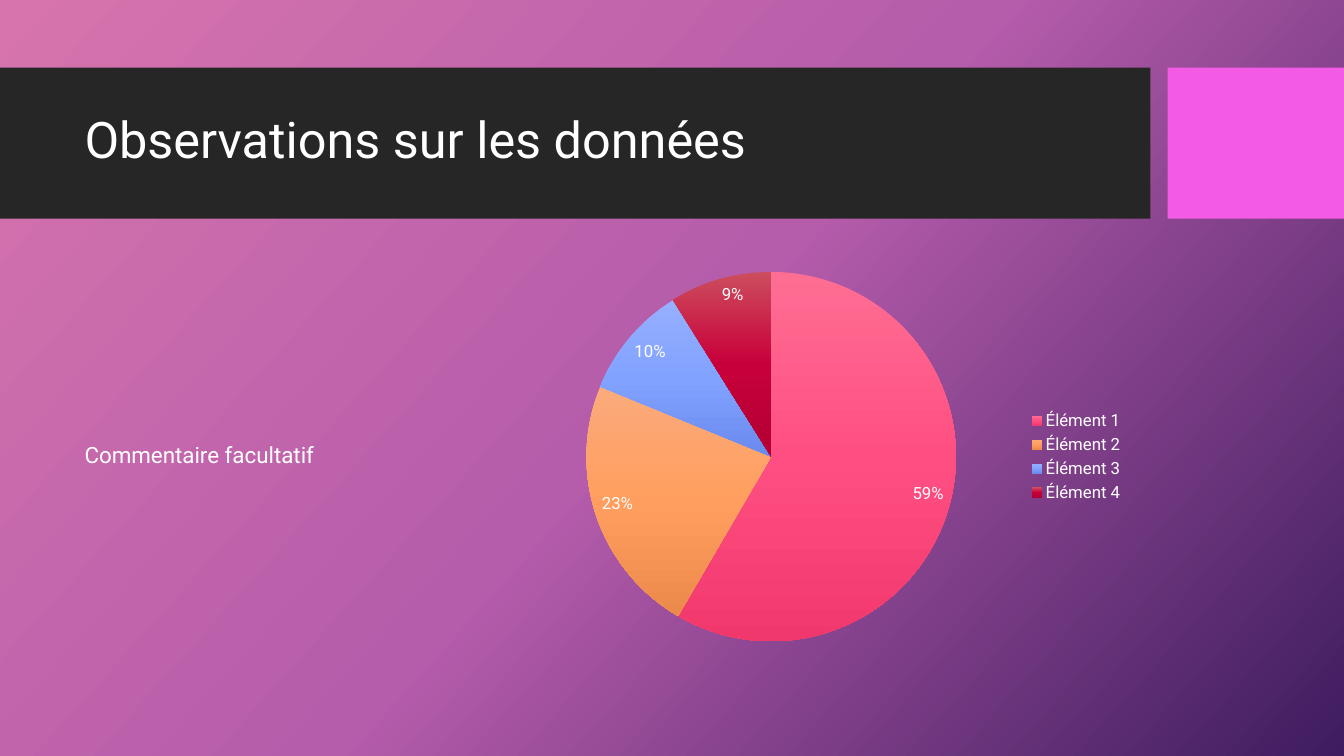
"""Build the data observations slide with its pie chart."""
from copy import deepcopy

from pptx import Presentation
from pptx.chart.data import CategoryChartData
from pptx.dml.color import RGBColor
from pptx.enum.chart import XL_CHART_TYPE, XL_LABEL_POSITION, XL_LEGEND_POSITION
from pptx.enum.shapes import MSO_SHAPE
from pptx.enum.text import MSO_ANCHOR
from pptx.util import Inches, Pt

WHITE = RGBColor(0xFF, 0xFF, 0xFF)
CHARCOAL = RGBColor(0x26, 0x26, 0x26)
PINK = RGBColor(0xF3, 0x5A, 0xE6)
BACKDROP = (RGBColor(0xD7, 0x74, 0xAD), RGBColor(0xB5, 0x5C, 0xAB), RGBColor(0x3E, 0x1C, 0x5F))
ROSE = (RGBColor(0xFE, 0x6E, 0x93), RGBColor(0xFF, 0x4F, 0x82), RGBColor(0xF1, 0x38, 0x6D))
ORANGE = (RGBColor(0xFB, 0xAB, 0x7C), RGBColor(0xFF, 0x9E, 0x5E), RGBColor(0xEB, 0x8A, 0x4B))
BLUE = (RGBColor(0x96, 0xB0, 0xFF), RGBColor(0x82, 0xA2, 0xFF), RGBColor(0x69, 0x8B, 0xEE))
CRIMSON = (RGBColor(0xCC, 0x4D, 0x5D), RGBColor(0xC8, 0x00, 0x3A), RGBColor(0xB2, 0x00, 0x33))
ITEMS = (
    ("Élément 1", 59, ROSE),
    ("Élément 2", 23, ORANGE),
    ("Élément 3", 10, BLUE),
    ("Élément 4", 9, CRIMSON),
)


class SlideBuilder:
    """Hold the text style and the current slide."""

    def __init__(self, slide, font_name, text_color):
        self.slide = slide
        self.font_name = font_name
        self.text_color = text_color

    def style_font(self, font, size):
        font.name = self.font_name
        font.size = Pt(size)
        font.color.rgb = self.text_color

    def gradient(self, fill, colors, angle):
        fill.gradient()
        fill.gradient_angle = 360 - angle
        stop_list = fill.gradient_stops._gsLst
        stop_list.append(deepcopy(stop_list[-1]))
        for index, (stop, color) in enumerate(zip(fill.gradient_stops, colors)):
            stop.position = index / (len(colors) - 1)
            stop.color.rgb = color

    def band(self, left, width, color):
        band = self.slide.shapes.add_shape(
            MSO_SHAPE.RECTANGLE, Inches(left), Inches(0.67), Inches(width), Inches(1.5))
        band.shadow.inherit = False
        band.fill.solid()
        band.fill.fore_color.rgb = color
        band.line.fill.background()

    def text(self, wording, left, top, width, height, size):
        box = self.slide.shapes.add_textbox(
            Inches(left), Inches(top), Inches(width), Inches(height))
        frame = box.text_frame
        frame.word_wrap = True
        frame.vertical_anchor = MSO_ANCHOR.MIDDLE
        paragraph = frame.paragraphs[0]
        paragraph.line_spacing = 0.9
        run = paragraph.add_run()
        run.text = wording
        self.style_font(run.font, size)

    def pie(self, items, left, top, width, height):
        data = CategoryChartData()
        data.categories = [name for name, _, _ in items]
        data.add_series("Series 1", [share for _, share, _ in items])
        chart = self.slide.shapes.add_chart(
            XL_CHART_TYPE.PIE, Inches(left), Inches(top),
            Inches(width), Inches(height), data).chart
        self.style_font(chart.font, 10)
        chart.has_title = False
        chart.has_legend = True
        chart.legend.position = XL_LEGEND_POSITION.RIGHT
        chart.legend.include_in_layout = False
        self.style_font(chart.legend.font, 12)

        plot = chart.plots[0]
        plot.vary_by_categories = True
        for index, (_, _, colors) in enumerate(items):
            wedge = plot.series[0].points[index].format
            self.gradient(wedge.fill, colors, 90)
            wedge.line.fill.background()
        plot.has_data_labels = True
        labels = plot.data_labels
        labels.show_value = True
        labels.show_percentage = False
        labels.number_format = '0"%"'
        labels.number_format_is_linked = False
        labels.position = XL_LABEL_POSITION.INSIDE_END
        self.style_font(labels.font, 12)


def main():
    deck = Presentation()
    deck.slide_width = Inches(13.33)
    deck.slide_height = Inches(7.5)
    slide = deck.slides.add_slide(deck.slide_layouts[6])
    builder = SlideBuilder(slide, "Roboto", WHITE)
    builder.gradient(slide.background.fill, BACKDROP, 42)
    builder.band(0, 11.41, CHARCOAL)
    builder.band(11.58, 1.75, PINK)
    builder.text("Observations sur les données", 0.74, 0.82, 10.51, 1.18, 36)
    builder.pie(ITEMS, 5.12, 2.56, 6.13, 3.94)
    builder.text("Commentaire facultatif", 0.74, 2.56, 4.14, 3.94, 16)
    deck.save("out.pptx")


if __name__ == "__main__":
    main()
